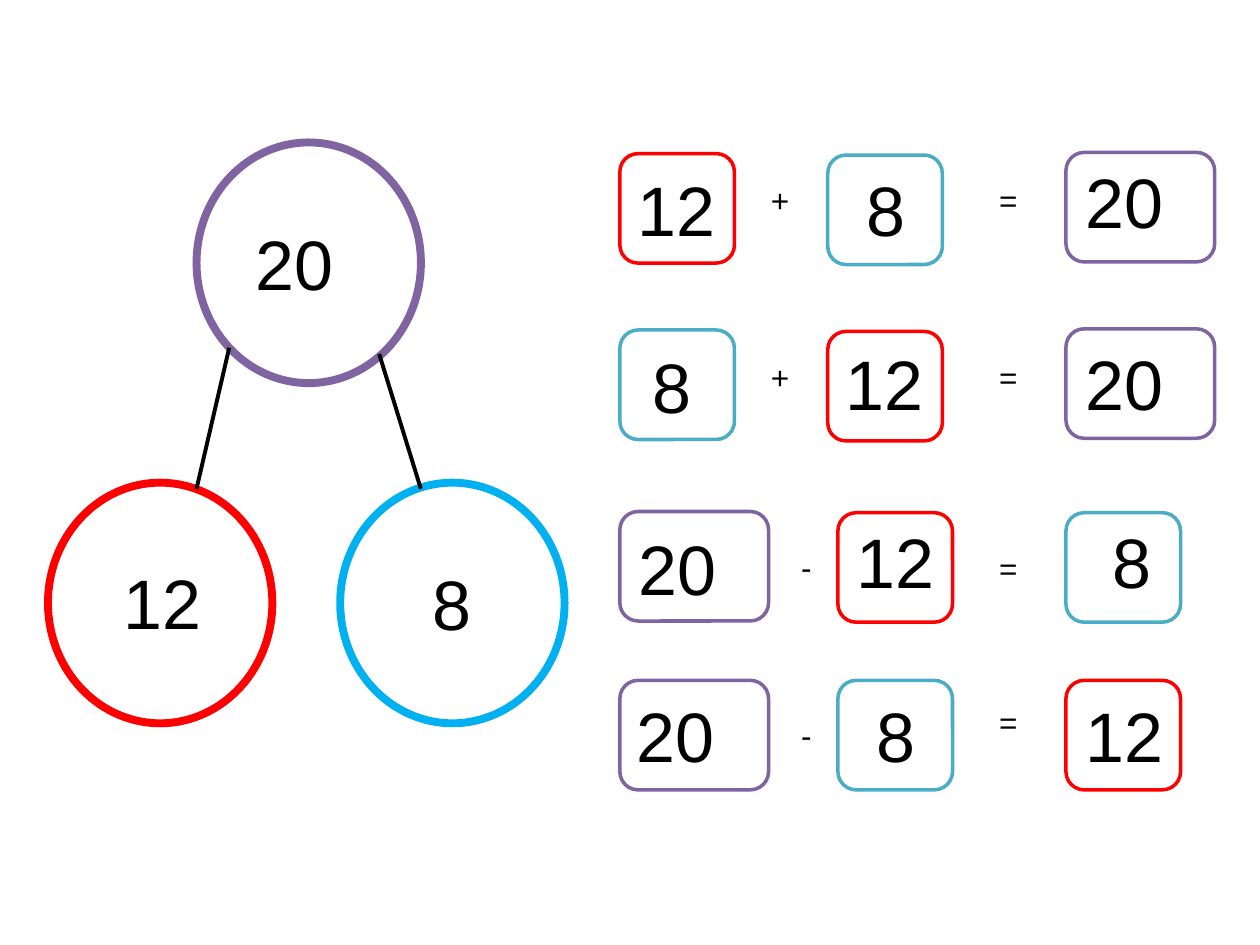
from lxml import etree
from pptx import Presentation
from pptx.dml.color import RGBColor
from pptx.enum import shapes, text
from pptx.oxml import ns
from pptx.util import Pt

HUES = {"ink": "000000", "white": "FFFFFF", "red": "FF0000",
        "sky": "00B0F0", "teal": "4BACC6", "plum": "8064A2"}
TONES = {"12": "red", "8": "teal", "20": "plum"}
FORM = shapes.MSO_SHAPE

DISC = (128.2, 137.5)   # circle size
NUM = (77.8, 55.4)      # number frame
SIGN = (28.1, 28.8)     # sign frame
TALL = 62.6             # box height
WIDE = {"12": 65.5, "8": 65.5, "20": 85}
EQUALS = 563.8          # left of every equals sign

# Part-whole circles: number, colour, left, top, number left, number top
DISCS = [("12", "red", 27.4, 275.8, 54, 316.1),
         ("8", "sky", 194.4, 275.8, 219.6, 316.8),
         ("20", "plum", 112.3, 81.4, 139, 122.4)]
STEMS = [(131, 198.7, 112.3, 279.4), (216.7, 202.3, 240.5, 279.4)]

# Number sentences: box lefts; sign, its left and top; equals top;
# then number, box top, number left, number top for each box
ADD, TAKE = (354.2, 473, 609.1), (354.2, 478.8, 609.1)
SUMS = [
    (ADD, "+", 433.4, 100.1, 100.1,
     [("12", 87.8, 347.8, 91.4), ("8", 88.6, 467.3, 91.4),
      ("20", 87.1, 613.4, 87.1)]),
    (ADD, "+", 433.4, 200.9, 200.9,
     [("8", 188.6, 344.9, 193), ("12", 189.4, 466.6, 190.8),
      ("20", 187.9, 613.4, 190.8)]),
    (TAKE, "-", 450.7, 309.6, 310.3,
     [("20", 292.3, 357.8, 296.6), ("12", 293, 473, 293),
      ("8", 293, 607.7, 293)]),
    (TAKE, "-", 450.7, 405.4, 398.2,
     [("20", 388.8, 356.4, 392.4), ("8", 388.8, 473, 392.4),
      ("12", 388.8, 603.4, 392.4)]),
]


def hue(name):
    return RGBColor.from_string(HUES[name])


def style(item, values):
    for name, value in values.items():
        setattr(item, name, value)


def outline(slide, form, x, y, size, tone, weight, fill=None):
    item = slide.shapes.add_shape(form, Pt(x), Pt(y), *map(Pt, size))
    item.shadow.inherit = False
    if fill:
        item.fill.solid()
        item.fill.fore_color.rgb = hue(fill)
    else:
        item.fill.background()
    item.line.color.rgb = hue(tone)
    item.line.width = Pt(weight)


def label(slide, words, x, y, size, points, align=text.PP_ALIGN.LEFT):
    frame = slide.shapes.add_textbox(Pt(x), Pt(y), *map(Pt, size)).text_frame
    style(frame, {"word_wrap": True,
                  "auto_size": text.MSO_AUTO_SIZE.SHAPE_TO_FIT_TEXT})
    para = frame.paragraphs[0]
    para.alignment = align
    run = para.add_run()
    run.text = words
    style(run.font, {"name": "Arial", "size": Pt(points)})
    run.font.color.rgb = hue("ink")


def number(slide, value, x, y):
    align = text.PP_ALIGN.LEFT if value == "20" else text.PP_ALIGN.CENTER
    label(slide, value, x, y, NUM, 40, align)


def stem(slide, ends):
    item = slide.shapes.add_connector(
        shapes.MSO_CONNECTOR.STRAIGHT, *map(Pt, ends))
    item.line.color.rgb = hue("ink")
    item.line.width = Pt(2.25)
    props = item._element.spPr
    etree.SubElement(props, ns.qn("a:effectLst"))


def equation(slide, lefts, sign, sx, sy, ey, terms):
    for x, (value, y, nx, ny) in zip(lefts, terms):
        fill = None if value == "12" else "white"
        outline(slide, FORM.ROUNDED_RECTANGLE, x, y, (WIDE[value], TALL),
                TONES[value], 2, fill)
        number(slide, value, nx, ny)
    label(slide, sign, sx, sy, SIGN, 18)
    label(slide, "=", EQUALS, ey, SIGN, 18)


def main():
    deck = Presentation()
    style(deck, {"slide_width": Pt(720), "slide_height": Pt(540)})
    slide = deck.slides.add_slide(deck.slide_layouts[6])

    # Part-whole model
    for value, tone, x, y, nx, ny in DISCS:
        outline(slide, FORM.OVAL, x, y, DISC, tone, 4.5)
        number(slide, value, nx, ny)
    for ends in STEMS:
        stem(slide, ends)

    # Number sentences
    for row in SUMS:
        equation(slide, *row)

    deck.save("out.pptx")


if __name__ == "__main__":
    main()
